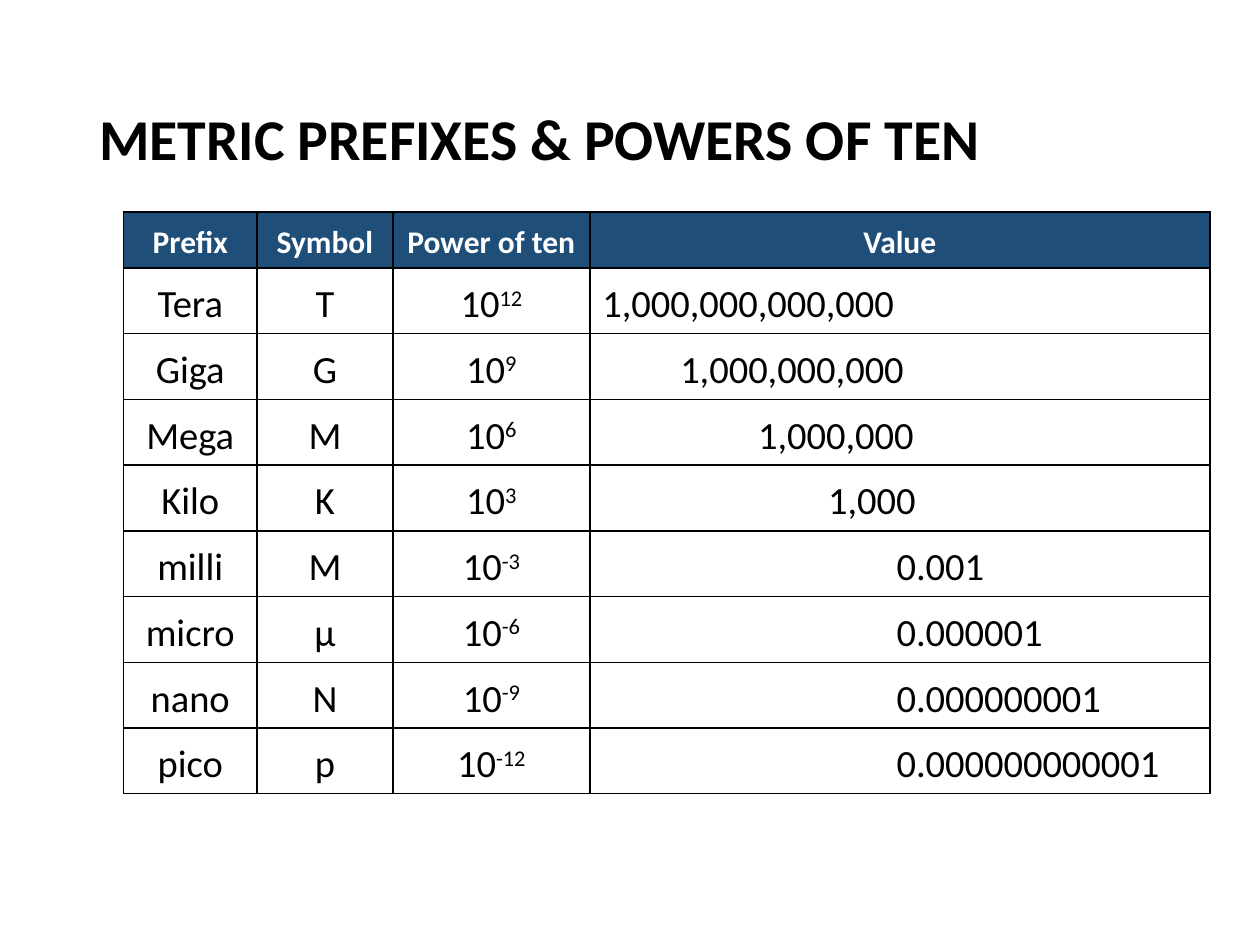
from lxml.etree import SubElement
from pptx import Presentation
from pptx.dml.color import RGBColor
from pptx.enum.text import MSO_ANCHOR, PP_ALIGN
from pptx.oxml import parse_xml
from pptx.oxml.ns import nsdecls
from pptx.util import Cm, Pt

BLACK = RGBColor(0x00, 0x00, 0x00)
WHITE = RGBColor(0xFF, 0xFF, 0xFF)
NAVY = RGBColor(0x1F, 0x4E, 0x79)
FONT = "Calibri"
HEADINGS = ["Prefix", "Symbol", "Power of ten", "Value"]
PREFIXES = [
    ("Tera", "T", "12", "1,000,000,000,000", 0),
    ("Giga", "G", "9", "1,000,000,000", 1.57),
    ("Mega", "M", "6", "1,000,000", 3.14),
    ("Kilo", "K", "3", "1,000", 4.55),
    ("milli", "M", "-3", "0.001", 5.93),
    ("micro", "μ", "-6", "0.000001", 5.93),
    ("nano", "N", "-9", "0.000000001", 5.93),
    ("pico", "p", "-12", "0.000000000001", 5.93),
]


def add_span(para, text, size, color, bold=False):
    span = para.add_run()
    span.text = text
    span.font.name = FONT
    span.font.size = Pt(size)
    span.font.bold = bold
    span.font.color.rgb = color
    return span


def style_cell(cell, fill):
    cell.vertical_anchor = MSO_ANCHOR.MIDDLE
    cell.fill.solid()
    cell.fill.fore_color.rgb = fill
    properties = cell._tc.get_or_add_tcPr()
    for position, side in enumerate(("lnL", "lnR", "lnT", "lnB")):
        border = parse_xml(f'<a:{side} {nsdecls("a")} w="{Pt(1)}"/>')
        solid = SubElement(border, border.tag.replace(side, "solidFill"))
        SubElement(solid, border.tag.replace(side, "srgbClr"), val=str(BLACK))
        properties.insert(position, border)
    para = cell.text_frame.paragraphs[0]
    para.line_spacing = 1.15
    para.alignment = PP_ALIGN.CENTER
    return para


deck = Presentation()
deck.slide_width = Cm(25.4)
deck.slide_height = Cm(19.05)
page = deck.slides.add_slide(deck.slide_layouts[6])

title_box = page.shapes.add_textbox(Cm(1.75), Cm(1.02), Cm(21.9), Cm(3.68))
title_box.text_frame.word_wrap = True
title_box.text_frame.vertical_anchor = MSO_ANCHOR.MIDDLE
title = title_box.text_frame.paragraphs[0]
title.line_spacing = 0.9
add_span(title, "METRIC PREFIXES & POWERS OF TEN", 33, BLACK, bold=True)

frame = page.shapes.add_table(
    len(PREFIXES) + 1, len(HEADINGS), Cm(2.49), Cm(4.27), Cm(21.9), Cm(11.52)
)
table = frame.table
for column, width in zip(table.columns, (2.69, 2.74, 3.97, 12.5)):
    column.width = Cm(width)
for row in table.rows:
    row.height = Cm(1.3)
table.rows[0].height = Cm(1.12)

for index, heading in enumerate(HEADINGS):
    para = style_cell(table.cell(0, index), NAVY)
    add_span(para, heading, 18, WHITE, bold=True)

for index, (prefix, symbol, power, value, indent) in enumerate(PREFIXES, start=1):
    paras = [style_cell(cell, WHITE) for cell in table.rows[index].cells]
    for para, text in zip(paras, (prefix, symbol, "10", value)):
        add_span(para, text, 22, BLACK)
    exponent = add_span(paras[2], power, 22, BLACK)
    exponent.font._element.set("baseline", "30000")
    paras[3].alignment = PP_ALIGN.LEFT
    paras[3]._p.get_or_add_pPr().set("marL", str(Cm(indent)))

deck.save("out.pptx")
